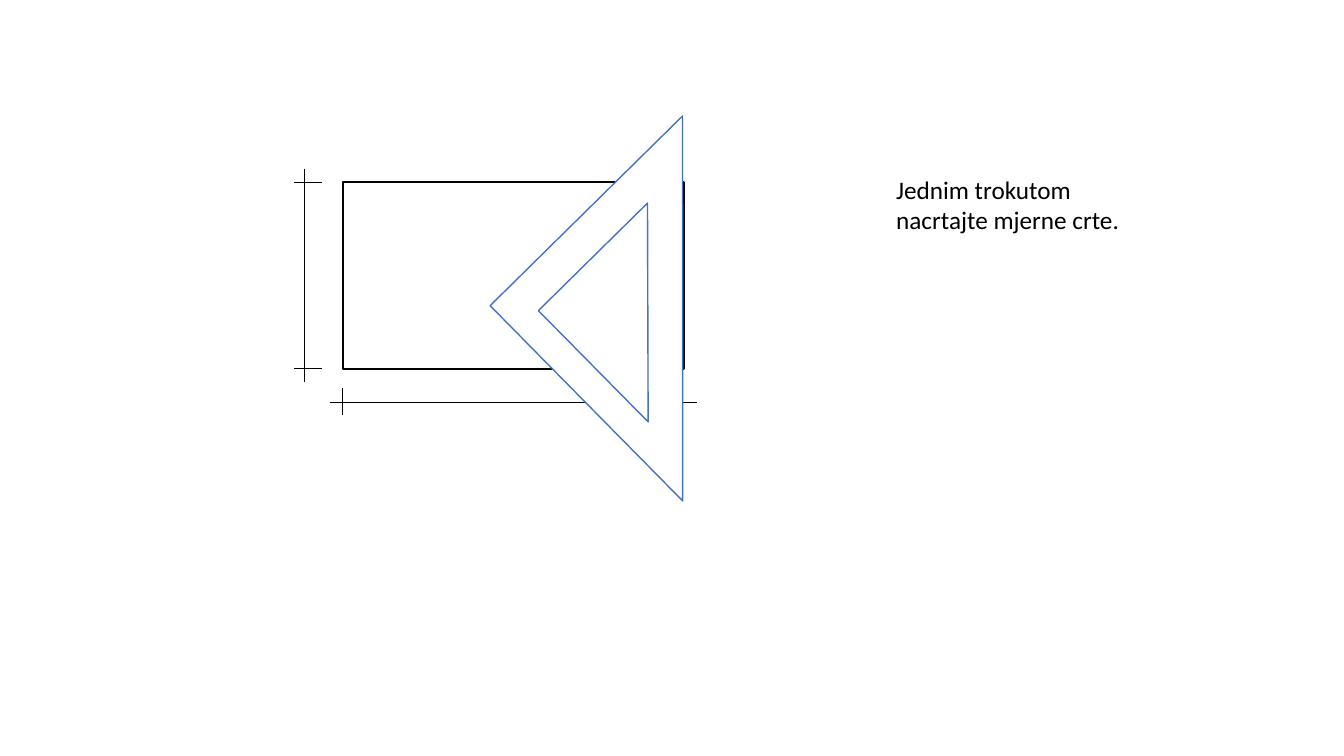
from dataclasses import dataclass

from lxml.etree import SubElement
from pptx import Presentation
from pptx.dml.color import RGBColor
from pptx.enum.shapes import MSO_AUTO_SHAPE_TYPE, MSO_CONNECTOR
from pptx.enum.text import MSO_AUTO_SIZE
from pptx.oxml.ns import qn
from pptx.shapes.autoshape import Shape
from pptx.util import Inches, Pt

BLACK = "000000"
WHITE = "FFFFFF"
BLUE = "4472C4"


@dataclass
class Line:
    start: tuple[float, float]
    end: tuple[float, float]


@dataclass
class Triangle:
    left: float
    top: float
    width: float
    height: float


DIMENSION_LINES = [
    Line((3.27, 3.99), (6.91, 3.99)),
    Line((3.02, 1.68), (3.02, 3.79)),
]
TICKS = [Line((2.92, y), (3.19, y)) for y in (3.66, 1.81)]
TICKS += [Line((x, 3.85), (x, 4.12)) for x in (3.4, 6.77)]

SET_SQUARE = [
    Triangle(5.41, 1.72, 2.72, 2.68),
    Triangle(5.65, 2.34, 1.55, 1.52),
]
SET_SQUARE_ROTATION = 45.4


def color(value: str) -> RGBColor:
    return RGBColor.from_string(value)


def style_outline(shape: Shape, line_color: str, width: float) -> None:
    shape.shadow.inherit = False
    shape.line.color.rgb = color(line_color)
    shape.line.width = Pt(width)


def add_line(shapes, line: Line) -> None:
    ends = [Inches(value) for value in (*line.start, *line.end)]
    connector = shapes.add_connector(MSO_CONNECTOR.STRAIGHT, *ends)
    connector.line.color.rgb = color(BLACK)
    connector.line.width = Pt(0.75)
    SubElement(connector._element.spPr, qn("a:effectLst"))


def add_triangle(shapes, triangle: Triangle) -> None:
    shape = shapes.add_shape(
        MSO_AUTO_SHAPE_TYPE.RIGHT_TRIANGLE,
        Inches(triangle.left), Inches(triangle.top),
        Inches(triangle.width), Inches(triangle.height),
    )
    shape.rotation = SET_SQUARE_ROTATION
    shape.fill.solid()
    shape.fill.fore_color.rgb = color(WHITE)
    style_outline(shape, BLUE, 1)


def add_instruction(shapes, text: str) -> None:
    box = shapes.add_textbox(Inches(8.79), Inches(1.68), Inches(2.6), Inches(0.71))
    frame = box.text_frame
    frame.word_wrap = True
    frame.auto_size = MSO_AUTO_SIZE.SHAPE_TO_FIT_TEXT
    frame.text = text
    font = frame.paragraphs[0].runs[0].font
    font.name = "Calibri"
    font.size = Pt(18)
    font.color.rgb = color(BLACK)


def main() -> None:
    deck = Presentation()
    deck.slide_width = Inches(13.33)
    deck.slide_height = Inches(7.5)
    page = deck.slides.add_slide(deck.slide_layouts[6])

    rectangle = page.shapes.add_shape(
        MSO_AUTO_SHAPE_TYPE.RECTANGLE,
        Inches(3.4), Inches(1.81), Inches(3.38), Inches(1.85),
    )
    rectangle.fill.background()
    style_outline(rectangle, BLACK, 1.5)

    for line in DIMENSION_LINES + TICKS:
        add_line(page.shapes, line)

    add_instruction(page.shapes, "Jednim trokutom nacrtajte mjerne crte.")

    set_square = page.shapes.add_group_shape()
    for triangle in SET_SQUARE:
        add_triangle(set_square.shapes, triangle)

    deck.save("out.pptx")


if __name__ == "__main__":
    main()
